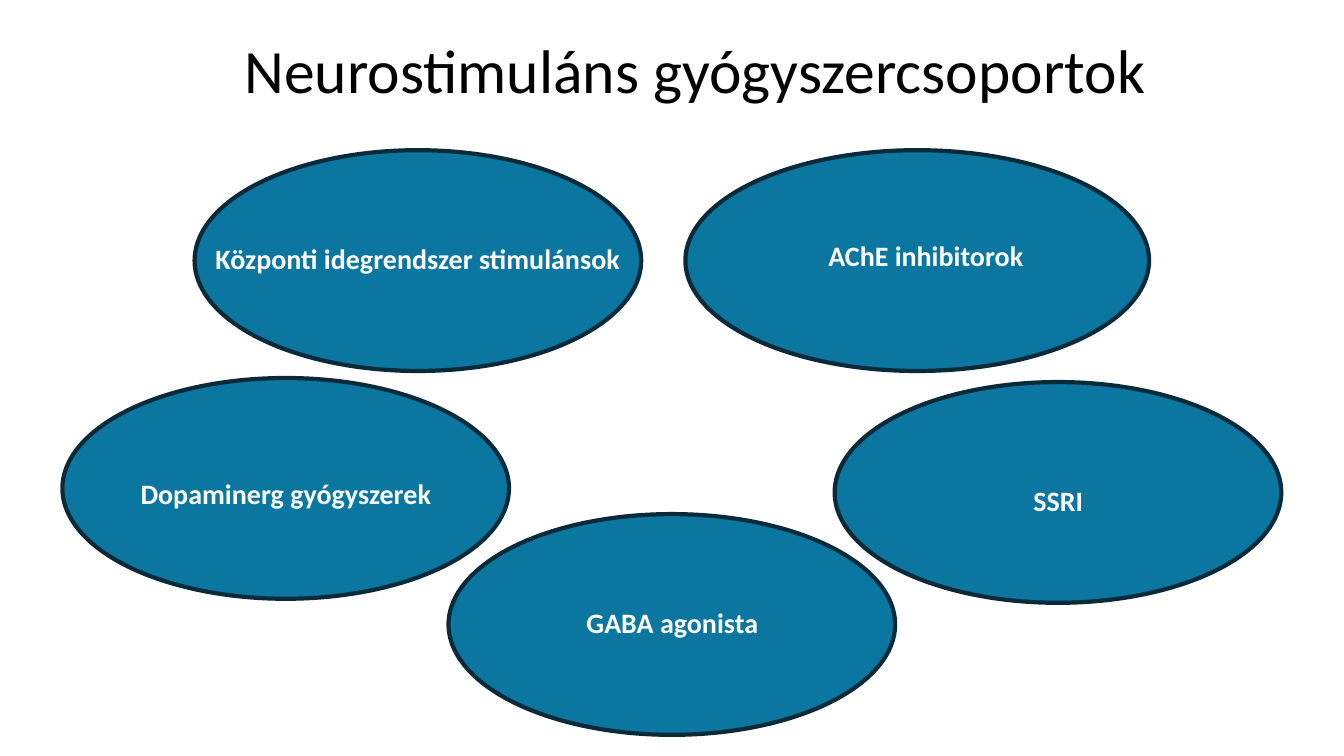
from dataclasses import dataclass

import pptx
import pptx.dml.color
import pptx.enum.shapes
import pptx.enum.text
import pptx.slide
import pptx.util

Pt = pptx.util.Pt
RGB = pptx.dml.color.RGBColor


@dataclass(frozen=True)
class Theme:
    font: str = "Calibri"
    title_size: float = 44
    label_size: float = 20
    line_width: float = 3
    title_color: RGB = RGB(0x00, 0x00, 0x00)
    label_color: RGB = RGB(0xFF, 0xFF, 0xFF)
    fill: RGB = RGB(0x0B, 0x76, 0xA0)
    line: RGB = RGB(0x09, 0x2A, 0x39)


@dataclass(frozen=True)
class DrugGroup:
    name: str
    left: float
    top: float
    label_left: float
    label_top: float
    label_width: float
    width: float = 319
    label_filled: bool = False


THEME = Theme()
ELLIPSE_HEIGHT = 157.7
LABEL_HEIGHT = 31.5

GROUPS = [
    DrugGroup("Dopaminerg gyógyszerek", 44.6, 270, 92.2, 337, 223.9),
    DrugGroup("GABA agonista", 320.4, 367.2, 411.1, 429.1, 138.2),
    DrugGroup("SSRI", 596.2, 272.9, 730.8, 342, 50.4, label_filled=True),
    DrugGroup("AChE inhibitorok", 489.6, 107.3, 583.9, 167, 154.8, width=331.2),
    DrugGroup("Központi idegrendszer stimulánsok", 139, 107.3, 145.4, 169.2, 306),
]


def format_text(tf: pptx.text.text.TextFrame, size: float, color: RGB, bold: bool) -> None:
    p = tf.paragraphs[0]
    p.alignment = pptx.enum.text.PP_ALIGN.CENTER
    font = p.runs[0].font
    font.name = THEME.font
    font.size = Pt(size)
    font.bold = bold
    font.color.rgb = color


def add_title(s: pptx.slide.Slide, text: str) -> None:
    sp = s.shapes.title
    sp.left, sp.top, sp.width, sp.height = Pt(87.8), Pt(2.9), Pt(828), Pt(99.4)
    tf = sp.text_frame
    tf.text = text
    tf.word_wrap = True
    tf.vertical_anchor = pptx.enum.text.MSO_ANCHOR.MIDDLE
    tf.paragraphs[0].line_spacing = 0.9
    format_text(tf, THEME.title_size, THEME.title_color, False)


def add_ellipse(s: pptx.slide.Slide, group: DrugGroup) -> None:
    sp = s.shapes.add_shape(
        pptx.enum.shapes.MSO_SHAPE.OVAL,
        Pt(group.left), Pt(group.top), Pt(group.width), Pt(ELLIPSE_HEIGHT),
    )
    sp.shadow.inherit = False
    sp.fill.solid()
    sp.fill.fore_color.rgb = THEME.fill
    sp.line.color.rgb = THEME.line
    sp.line.width = Pt(THEME.line_width)


def add_label(s: pptx.slide.Slide, group: DrugGroup) -> None:
    sp = s.shapes.add_textbox(
        Pt(group.label_left), Pt(group.label_top), Pt(group.label_width), Pt(LABEL_HEIGHT)
    )
    if group.label_filled:
        sp.fill.solid()
        sp.fill.fore_color.rgb = THEME.fill
    tf = sp.text_frame
    tf.text = group.name
    tf.word_wrap = False
    tf.auto_size = pptx.enum.text.MSO_AUTO_SIZE.SHAPE_TO_FIT_TEXT
    format_text(tf, THEME.label_size, THEME.label_color, True)


def main() -> None:
    prs = pptx.Presentation()
    prs.slide_width, prs.slide_height = Pt(960), Pt(540)
    s = prs.slides.add_slide(prs.slide_layouts.get_by_name("Title Only"))
    add_title(s, "Neurostimuláns gyógyszercsoportok ")
    for group in GROUPS:
        add_ellipse(s, group)
    for group in GROUPS:
        add_label(s, group)
    prs.save("out.pptx")


if __name__ == "__main__":
    main()
